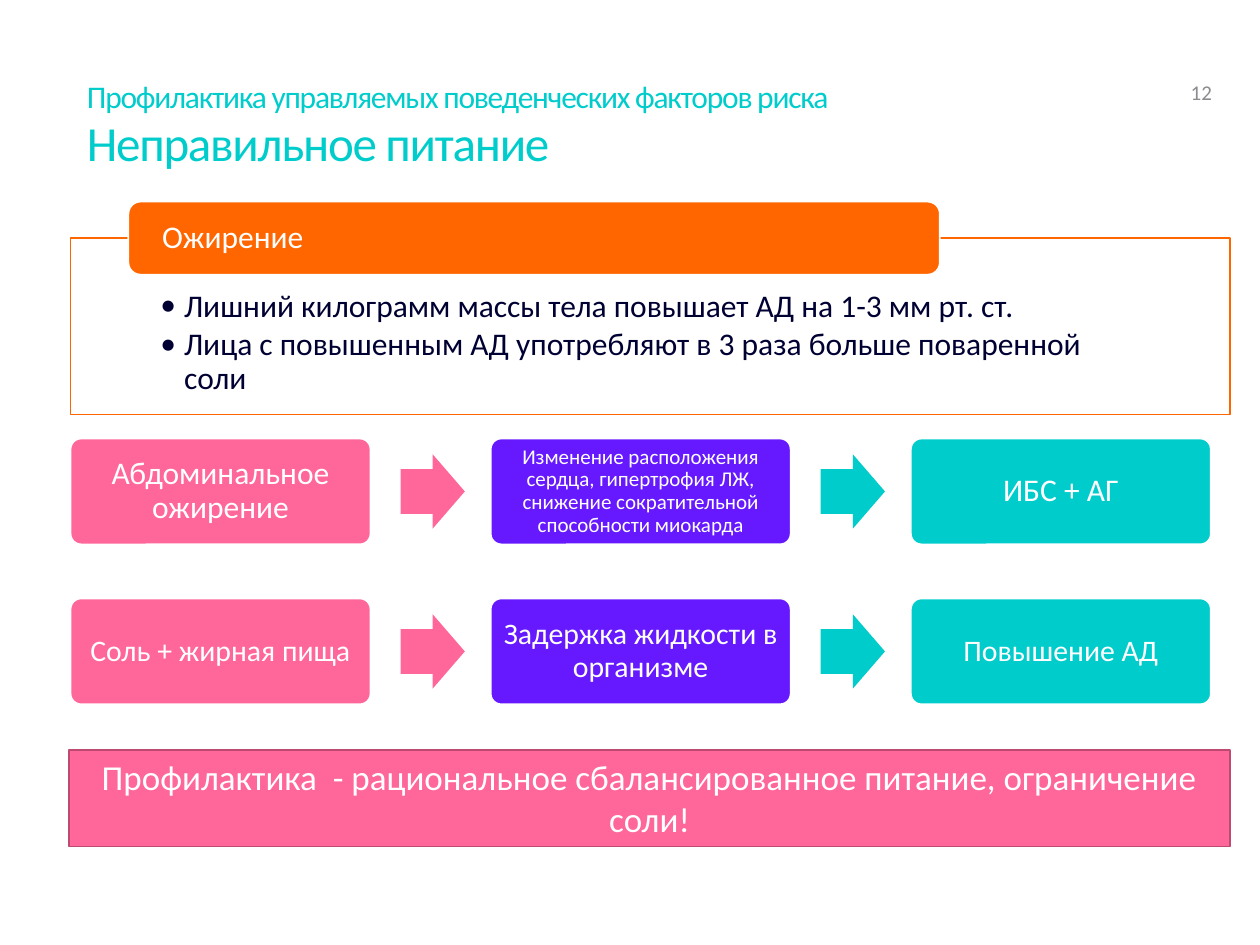
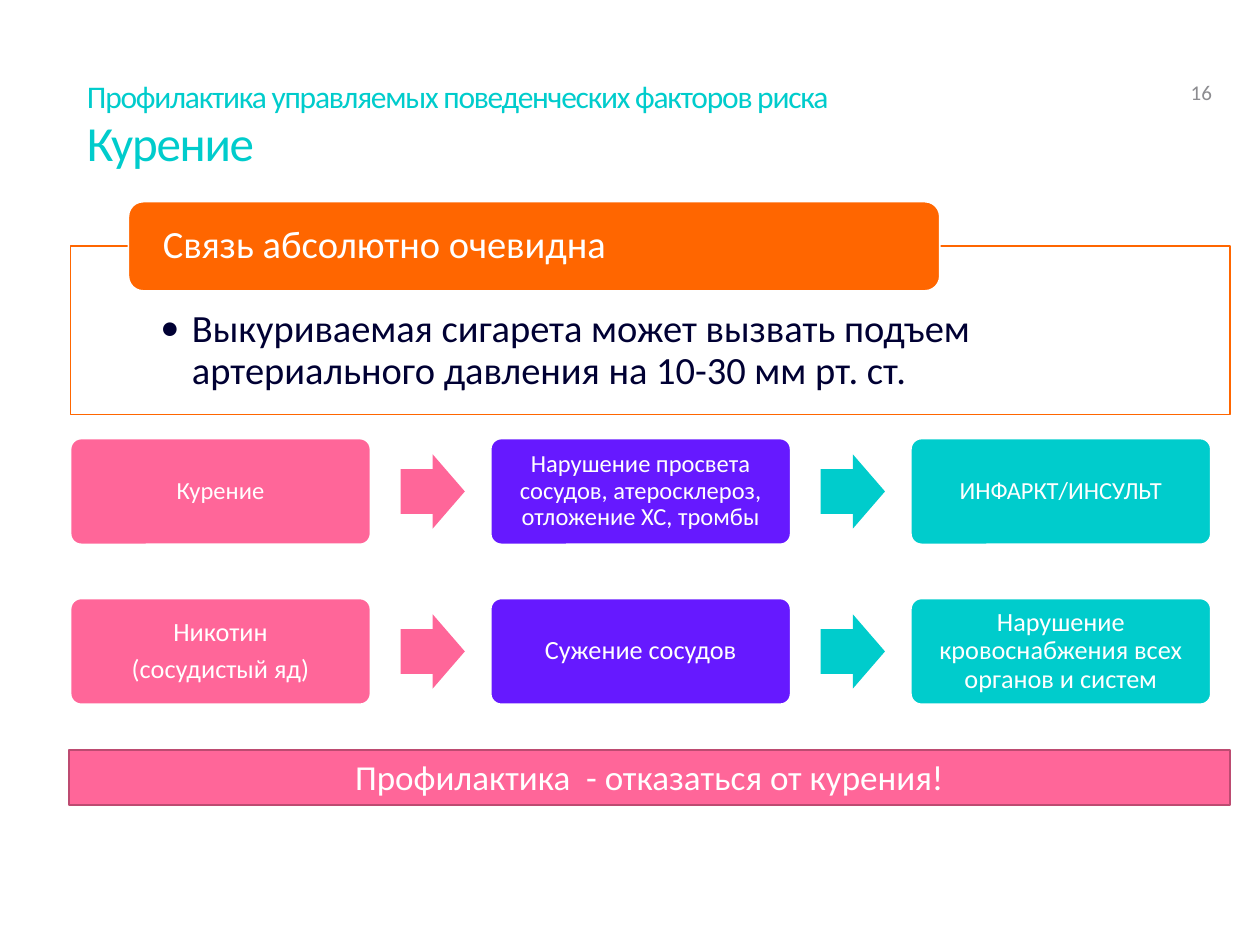
"""Build two slides on preventing behavioural risk factors."""
from dataclasses import dataclass

from lxml import etree
from pptx import Presentation
from pptx import util as u
from pptx.dml.color import RGBColor as Rgb
from pptx.enum import shapes, text
from pptx.oxml import ns

Pt = u.Pt
Kind = shapes.MSO_SHAPE
Side = text.PP_ALIGN
Anchor = text.MSO_ANCHOR


@dataclass(frozen=True)
class Theme:
    font: str = "Calibri"
    white: str = "FFFFFF"
    ink: str = "000033"
    gray: str = "8C8C90"
    teal: str = "00CCCC"
    pink: str = "FF6699"
    rose: str = "BD4B71"
    plum: str = "6619FF"
    flame: str = "FF6600"
    topic: int = 18
    title: int = 28
    page: int = 12
    band: int = 20


THEME = Theme()
TOPIC = "Профилактика управляемых поведенческих факторов риска"
SLIDES = [
    {
        "title": "Неправильное питание",
        "page": "12",
        "head": "Ожирение",
        "size": 18,
        "indent": 13.5,
        "facts": [
            "Лишний килограмм массы тела повышает АД на 1-3 мм рт. ст.",
            "Лица с повышенным АД употребляют в 3 раза больше поваренной соли",
        ],
        "chains": [
            [
                (["Абдоминальное ожирение"], 18),
                (["Изменение расположения сердца, гипертрофия ЛЖ, "
                  "снижение сократительной способности миокарда"], 12),
                (["ИБС + АГ"], 18),
            ],
            [
                (["Соль + жирная пища"], 17),
                (["Задержка жидкости в организме"], 17),
                (["Повышение АД"], 17),
            ],
        ],
        "advice": "Профилактика  - рациональное сбалансированное питание, "
                  "ограничение соли!",
        "deep": 55.4,
    },
    {
        "title": "Курение",
        "page": "16",
        "head": "Связь абсолютно очевидна",
        "size": 22,
        "indent": 18,
        "facts": [
            "Выкуриваемая сигарета может вызвать подъем "
            "артериального давления на 10-30 мм рт. ст.",
        ],
        "chains": [
            [
                (["Курение"], 14),
                (["Нарушение просвета сосудов, атеросклероз, "
                  "отложение ХС, тромбы"], 14),
                (["ИНФАРКТ/ИНСУЛЬТ"], 14),
            ],
            [
                (["Никотин", "(сосудистый яд)"], 15),
                (["Сужение сосудов"], 15),
                (["Нарушение кровоснабжения всех органов и систем"], 15),
            ],
        ],
        "advice": "Профилактика  - отказаться от курения!",
        "deep": 31.6,
    },
]

EDGE, WIDE = 40.3, 662.4
CARD_W, CARD_H, STEP = 171.4, 60.5, 240.1
ROW_TOP, ROW_STEP = 250.6, 91.4
ARROW_W, ARROW_H, ARROW_IN = 36.7, 42.5, 188.6
HEAD_TOP, FRAME_END = 115.2, 236.9
TINTS = [THEME.pink, THEME.plum, THEME.teal]
ARROWS = [THEME.pink, THEME.teal]


def style(font, size, tint):
    font.name = THEME.font
    font.size = Pt(size)
    font.color.rgb = Rgb.from_string(tint)


def setup(frame, pads, anchor, wrap=True):
    frame.word_wrap = wrap
    frame.vertical_anchor = anchor
    (frame.margin_left, frame.margin_top,
     frame.margin_right, frame.margin_bottom) = map(Pt, pads)


def write(frame, lines, size, tint, align=Side.LEFT, space=None, after=0, indent=0):
    for i, line in enumerate(lines):
        para = frame.paragraphs[0] if i == 0 else frame.add_paragraph()
        para.text = line
        para.alignment = align
        if space:
            para.line_spacing = space
            para.space_after = Pt(size * after)
        if indent:
            props = para._p.get_or_add_pPr()
            props.set("marL", str(Pt(indent)))
            props.set("indent", str(-Pt(indent)))
            etree.SubElement(props, ns.qn("a:buFont")).set("typeface", THEME.font)
            etree.SubElement(props, ns.qn("a:buChar")).set("char", "•")
        style(para.font, size, tint)


def draw(slide, kind, box, fill, line=None, bends=()):
    shape = slide.shapes.add_shape(kind, *map(Pt, box))
    shape.shadow.inherit = False
    shape.fill.solid()
    shape.fill.fore_color.rgb = Rgb.from_string(fill)
    if line:
        shape.line.color.rgb = Rgb.from_string(line)
        shape.line.width = Pt(1)
    else:
        shape.line.fill.background()
    for i, bend in enumerate(bends):
        shape.adjustments[i] = bend
    return shape


def add_title(slide, title, page):
    frame = slide.shapes.add_textbox(*map(Pt, (49.7, 28.8, 620.6, 74.2))).text_frame
    setup(frame, (0, 3.6, 0, 3.6), Anchor.MIDDLE)
    para = frame.paragraphs[0]
    para.line_spacing = Pt(32)
    para.text = TOPIC + "\v" + title
    for run, size in zip(para.runs, (THEME.topic, THEME.title)):
        style(run.font, size, THEME.teal)
        run._r.get_or_add_rPr().set("spc", "-70")
    frame = slide.shapes.add_textbox(*map(Pt, (680.4, 28.8, 27.4, 33.8))).text_frame
    setup(frame, (0, 2.9, 0, 2.9), Anchor.BOTTOM, False)
    write(frame, [page], THEME.page, THEME.gray)


def add_facts(slide, head, facts, size, indent):
    tall = 2.32 * size
    top = HEAD_TOP + tall / 2
    frame = draw(slide, Kind.RECTANGLE, (EDGE, top, WIDE, FRAME_END - top),
                 THEME.white, THEME.flame).text_frame
    setup(frame, (51.4, 1.64 * size, 51.4, 0.55 * size), Anchor.TOP)
    write(frame, facts, size, THEME.ink, space=0.9, after=0.15, indent=indent)
    frame = draw(slide, Kind.ROUNDED_RECTANGLE, (73.4, HEAD_TOP, 463.7, tall),
                 THEME.flame, THEME.white).text_frame
    setup(frame, (17.3, 0, 17.3, 0), Anchor.MIDDLE)
    write(frame, [head], size, THEME.white, space=0.9, after=0.35)


def add_chain(slide, cards, top):
    for i, (lines, size) in enumerate(cards):
        left = EDGE + i * STEP
        frame = draw(slide, Kind.ROUNDED_RECTANGLE, (left, top, CARD_W, CARD_H),
                     TINTS[i], THEME.white, [0.1]).text_frame
        setup(frame, [0.3 * size] * 4, Anchor.MIDDLE)
        write(frame, lines, size, THEME.white, Side.CENTER, 0.9, 0.35)
        if i < len(ARROWS):
            box = (left + ARROW_IN, top + (CARD_H - ARROW_H) / 2, ARROW_W, ARROW_H)
            draw(slide, Kind.RIGHT_ARROW, box, ARROWS[i], bends=[0.6, 0.5])


def add_band(slide, advice, deep):
    frame = draw(slide, Kind.RECTANGLE, (39.6, 428.4, 663.1, deep),
                 THEME.pink, THEME.rose).text_frame
    setup(frame, (7.2, 3.6, 7.2, 3.6), Anchor.TOP)
    write(frame, [advice], THEME.band, THEME.white, Side.CENTER)


def main():
    deck = Presentation()
    deck.slide_width, deck.slide_height = Pt(720), Pt(540)
    for data in SLIDES:
        slide = deck.slides.add_slide(deck.slide_layouts[6])
        add_title(slide, data["title"], data["page"])
        add_band(slide, data["advice"], data["deep"])
        add_facts(slide, data["head"], data["facts"], data["size"], data["indent"])
        for i, cards in enumerate(data["chains"]):
            add_chain(slide, cards, ROW_TOP + i * ROW_STEP)
    deck.save("out.pptx")


if __name__ == "__main__":
    main()
